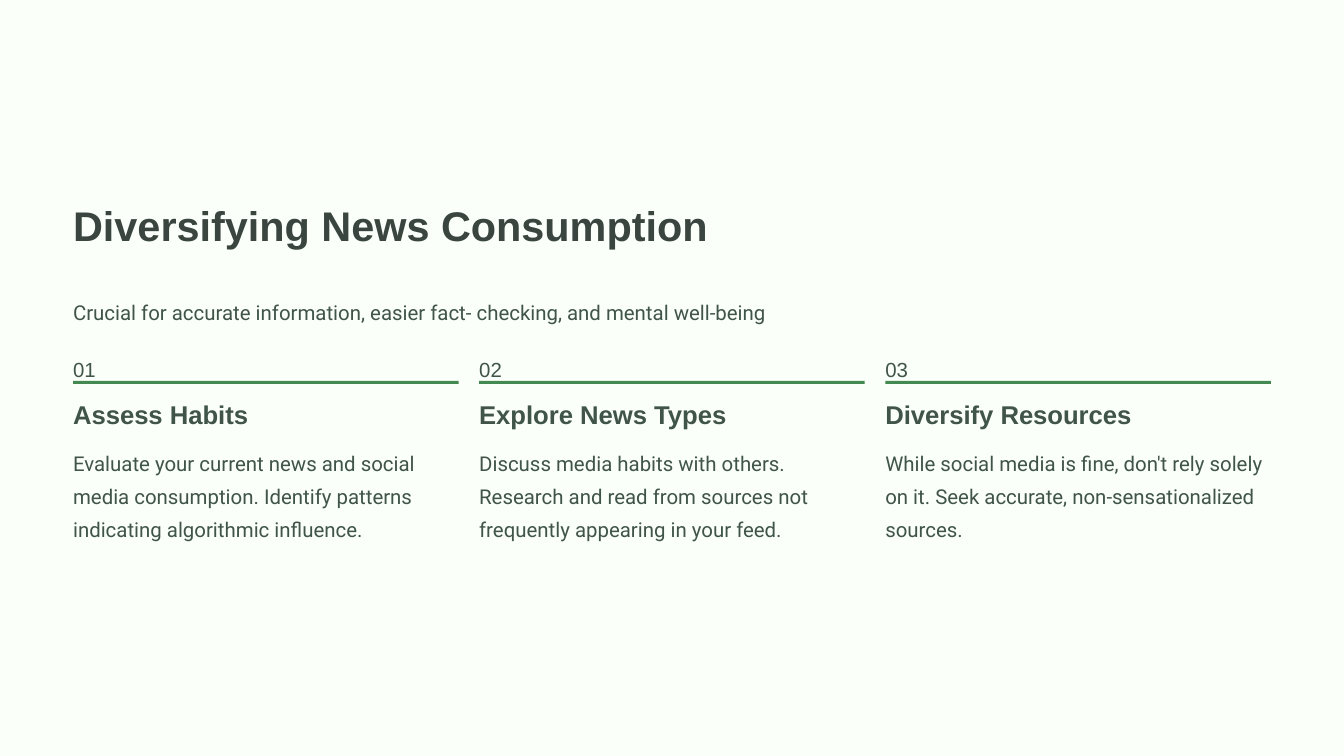
from pptx import Presentation
from pptx.dml.color import RGBColor
from pptx.enum.shapes import MSO_SHAPE
from pptx.util import Cm, Pt

RECTANGLE = MSO_SHAPE.RECTANGLE
COLORS = {
    "background": "FAFFFA",
    "title": "3B4540",
    "body": "405449",
    "rule": "438951",
}
PAGE_WIDTH = 40.64
PAGE_HEIGHT = 22.86
MARGIN = 2.21
COLUMN_WIDTH = 11.66
COLUMN_STEP = 12.28

deck = Presentation()
deck.slide_width = Cm(PAGE_WIDTH)
deck.slide_height = Cm(PAGE_HEIGHT)
page = deck.slides.add_slide(deck.slide_layouts[6])


def add_panel(left, top, width, height, color):
    panel = page.shapes.add_shape(RECTANGLE, Cm(left), Cm(top), Cm(width), Cm(height))
    panel.shadow.inherit = False
    panel.fill.solid()
    panel.fill.fore_color.rgb = RGBColor.from_string(COLORS[color])
    panel.line.fill.background()


def add_text(text, left, top, width, height, size=17.5, font="Roboto",
             color="body", bold=False, spacing=28.3, wrap=False):
    box = page.shapes.add_textbox(Cm(left), Cm(top), Cm(width), Cm(height))
    frame = box.text_frame
    frame.margin_left = frame.margin_right = 0
    frame.margin_top = frame.margin_bottom = 0
    frame.word_wrap = wrap
    para = frame.paragraphs[0]
    para.line_spacing = Pt(spacing)
    span = para.add_run()
    span.text = text
    span.font.name = font
    span.font.size = Pt(size)
    span.font.bold = bold
    span.font.color.rgb = RGBColor.from_string(COLORS[color])


add_panel(0, 0, PAGE_WIDTH, PAGE_HEIGHT, "background")
add_text("Diversifying News Consumption", MARGIN, 5.98, 20.57, 1.57,
         size=35.5, font="Arial", color="title", bold=True, spacing=44.5)
add_text("Crucial for accurate information, easier fact- checking, and mental well-being",
         MARGIN, 8.82, 36.22, 1.02)

steps = [
    ("Assess Habits", 7.87,
     "Evaluate your current news and social media consumption. "
     "Identify patterns indicating algorithmic influence."),
    ("Explore News Types", 7.98,
     "Discuss media habits with others. Research and read from sources "
     "not frequently appearing in your feed."),
    ("Diversify Resources", 8.03,
     "While social media is fine, don't rely solely on it. "
     "Seek accurate, non-sensationalized sources."),
]

for index, (heading, heading_width, description) in enumerate(steps):
    left = MARGIN + index * COLUMN_STEP
    add_text(f"{index + 1:02d}", left, 10.54, 0.8, 0.79, font="Arial")
    add_panel(left, 11.52, COLUMN_WIDTH, 0.09, "rule")
    add_text(heading, left, 12.01, heading_width, 0.99,
             size=22, font="Arial", bold=True, spacing=27.5)
    add_text(description, left, 13.39, COLUMN_WIDTH, 3.02, wrap=True)

deck.save("out.pptx")
